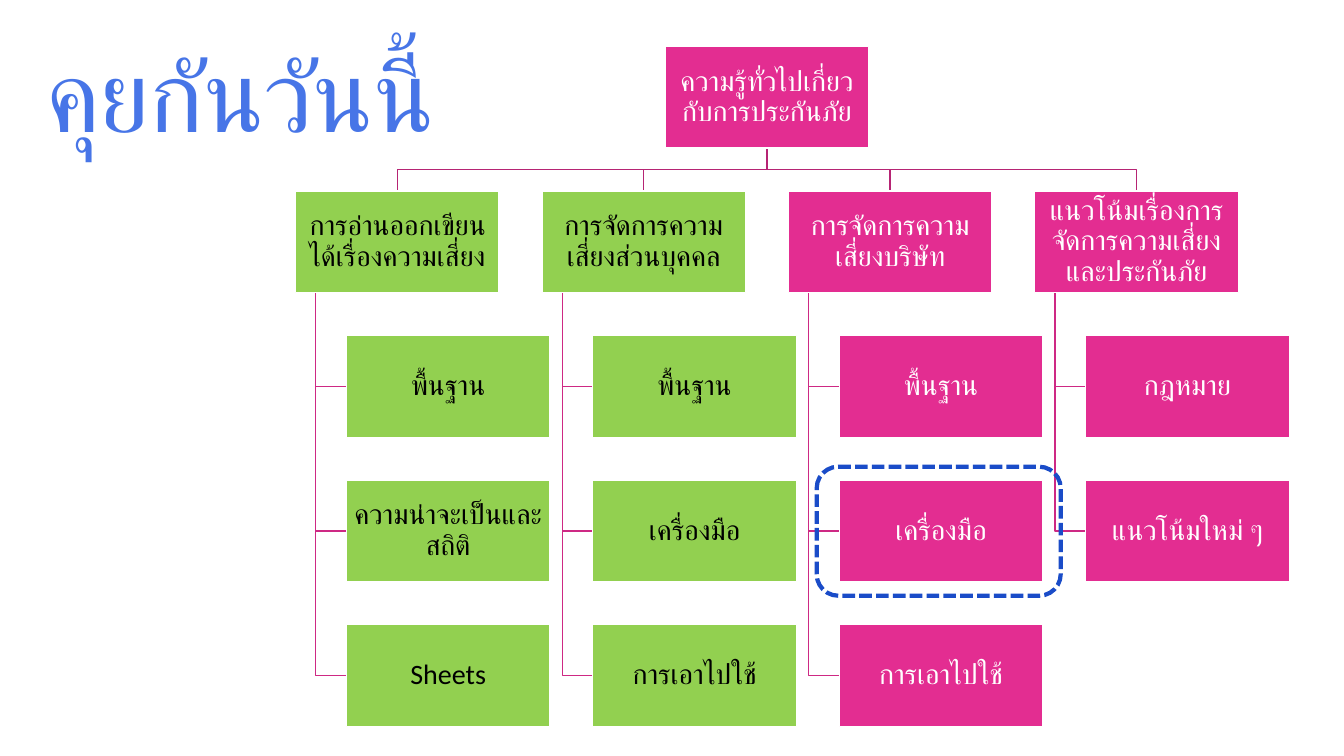
from pptx import Presentation
from pptx.dml.color import RGBColor
from pptx.enum.dml import MSO_LINE_DASH_STYLE as Dash
from pptx.enum.shapes import MSO_SHAPE as Shape
from pptx.enum.text import MSO_ANCHOR as Anchor, PP_ALIGN as Align
from pptx.util import Inches, Pt

PINK = RGBColor(0xE3, 0x2D, 0x91)
GREEN = RGBColor(0x92, 0xD0, 0x50)
WHITE = RGBColor(0xFF, 0xFF, 0xFF)
BLACK = RGBColor(0x00, 0x00, 0x00)
TOP_LINE = RGBColor(0xB6, 0x24, 0x74)
SIDE_LINE = RGBColor(0xCE, 0x29, 0x84)
TITLE_BLUE = RGBColor(0x47, 0x75, 0xE7)
FRAME_BLUE = RGBColor(0x1A, 0x4C, 0xC8)

# Chart grid in inches: every box is twice as wide as it is high
BOX_W, BOX_H = 2.02, 1.01
GAP = 0.21 * BOX_W
COLUMN, ROW = BOX_W + GAP, BOX_H + GAP
LEFT, TOP = 2.93, 0.46
INDENT, TRUNK = BOX_W / 4, BOX_W / 10
ROOT_LEFT = LEFT + 1.5 * COLUMN

ROOT = "ความรู้ทั่วไปเกี่ยวกับการประกันภัย"
BRANCHES = [
    ("การอ่านออกเขียนได้เรื่องความเสี่ยง", GREEN, BLACK,
     ["พื้นฐาน", "ความน่าจะเป็นและสถิติ", "Sheets"]),
    ("การจัดการความเสี่ยงส่วนบุคคล", GREEN, BLACK,
     ["พื้นฐาน", "เครื่องมือ", "การเอาไปใช้"]),
    ("การจัดการความเสี่ยงบริษัท", PINK, WHITE,
     ["พื้นฐาน", "เครื่องมือ", "การเอาไปใช้"]),
    ("แนวโน้มเรื่องการจัดการความเสี่ยงและประกันภัย", PINK, WHITE,
     ["กฎหมาย", "แนวโน้มใหม่ ๆ"]),
]

deck = Presentation()
deck.slide_width, deck.slide_height = Inches(13.33), Inches(7.5)
page = deck.slides.add_slide(deck.slide_layouts[6])


def add_box(text, left, row, fill, color):
    box = page.shapes.add_shape(Shape.RECTANGLE, Inches(left), Inches(TOP + row * ROW),
                                Inches(BOX_W), Inches(BOX_H))
    box.shadow.inherit = False
    box.fill.solid()
    box.fill.fore_color.rgb = fill
    box.line.color.rgb = WHITE
    box.line.width = Pt(1)
    frame = box.text_frame
    frame.word_wrap = True
    frame.vertical_anchor = Anchor.MIDDLE
    frame.margin_left = frame.margin_right = Inches(0.01)
    frame.margin_top = frame.margin_bottom = Inches(0.01)
    para = frame.paragraphs[0]
    para.text = text
    para.alignment = Align.CENTER
    para.line_spacing = 0.9
    para.font.name = "Calibri"
    para.font.size = Pt(20)
    para.font.color.rgb = color


def add_elbow(points, color):
    start, *rest = [(Inches(x), Inches(y)) for x, y in points]
    builder = page.shapes.build_freeform(*start)
    builder.add_line_segments(rest, close=False)
    elbow = builder.convert_to_shape()
    elbow.shadow.inherit = False
    elbow.fill.background()
    elbow.line.color.rgb = color
    elbow.line.width = Pt(1)


# Title
title = page.shapes.add_textbox(Inches(0.36), Inches(TOP), Inches(12.26), Inches(1.1))
title.text_frame.word_wrap = True
title.text_frame.vertical_anchor = Anchor.BOTTOM
para = title.text_frame.paragraphs[0]
para.text = "คุยกันวันนี้"
para.line_spacing = 0.8
para.font.name = "Lato"
para.font.size = Pt(72)
para.font.color.rgb = TITLE_BLUE

# Connecting lines, behind the boxes
root_x, root_bottom = ROOT_LEFT + BOX_W / 2, TOP + BOX_H
branch_top = TOP + ROW
bend_y = (root_bottom + branch_top) / 2
for column, (_, _, _, topics) in enumerate(BRANCHES):
    left = LEFT + column * COLUMN
    branch_x, trunk_x = left + BOX_W / 2, left + TRUNK
    add_elbow([(root_x, root_bottom), (root_x, bend_y),
               (branch_x, bend_y), (branch_x, branch_top)], TOP_LINE)
    for row in range(2, 2 + len(topics)):
        topic_y = TOP + row * ROW + BOX_H / 2
        add_elbow([(trunk_x, branch_top + BOX_H), (trunk_x, topic_y),
                   (left + INDENT, topic_y)], SIDE_LINE)

# Root, branches and their topics
add_box(ROOT, ROOT_LEFT, 0, PINK, WHITE)
for column, (heading, fill, color, topics) in enumerate(BRANCHES):
    left = LEFT + column * COLUMN
    add_box(heading, left, 1, fill, color)
    for row, topic in enumerate(topics, start=2):
        add_box(topic, left + INDENT, row, fill, color)

# Dashed frame around the tools topic
focus = page.shapes.add_shape(Shape.ROUNDED_RECTANGLE, Inches(8.1), Inches(4.63),
                              Inches(2.42), Inches(1.28))
focus.shadow.inherit = False
focus.fill.background()
focus.line.color.rgb = FRAME_BLUE
focus.line.width = Pt(3)
focus.line.dash_style = Dash.SQUARE_DOT

deck.save("out.pptx")
